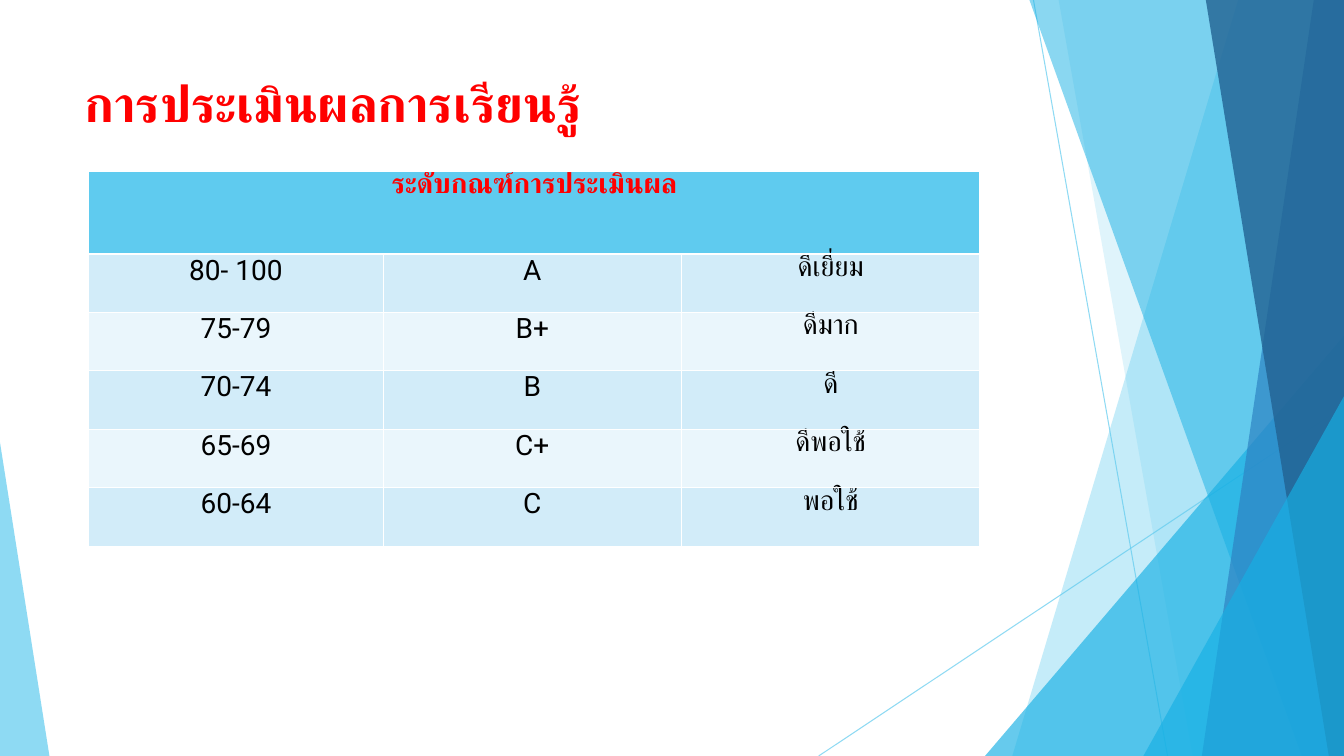
from lxml import etree
from pptx import Presentation
from pptx.dml.color import RGBColor
from pptx.enum.shapes import MSO_CONNECTOR, MSO_SHAPE
from pptx.enum.text import MSO_ANCHOR, PP_ALIGN
from pptx.oxml.ns import qn
from pptx.util import Inches, Pt

STRAIGHT = MSO_CONNECTOR.STRAIGHT
TRIANGLE = MSO_SHAPE.ISOSCELES_TRIANGLE
TOP = MSO_ANCHOR.TOP
LEFT, CENTER = PP_ALIGN.LEFT, PP_ALIGN.CENTER

WIDE, HIGH = 13.33, 7.5
FONT = "Roboto"
SKY, CYAN, BLUE, NAVY = "5FCBEF", "17B0E4", "2E83C3", "226292"
RED, BLACK = "FF0000", "000000"
STRIPES = ("D2ECF9", "EAF6FC")

HEAD = "ระดับกณฑ์การประเมินผล"
GRADES = [
    ("80- 100", "A", "ดีเยี่ยม"),
    ("75-79", "B+", "ดีมาก"),
    ("70-74", "B", "ดี"),
    ("65-69", "C+", "ดีพอใช้"),
    ("60-64", "C", "พอใช้"),
]


def paint(fill, color, alpha=100):
    """Solid fill from a hex string, with opacity in percent."""
    fill.solid()
    fill.fore_color.rgb = RGBColor.from_string(color)
    if alpha < 100:
        tint = fill._xPr.find(qn("a:solidFill"))[0]
        etree.SubElement(tint, qn("a:alpha"), val=str(alpha * 1000))


def style(para, size, color, bold, align):
    para.alignment = align
    font = para.font
    font.name, font.size, font.bold = FONT, Pt(size), bold
    font.color.rgb = RGBColor.from_string(color)


def finish(shape, color, alpha):
    shape.shadow.inherit = False
    shape.line.fill.background()
    paint(shape.fill, color, alpha)


def ray(shapes, *ends):
    line = shapes.add_connector(STRAIGHT, *map(Inches, ends))
    line.line.width = Pt(0.75)
    paint(line.line.fill, SKY, 70)
    etree.SubElement(line._element.spPr, qn("a:effectLst"))


def band(shapes, top, foot, color, alpha):
    """Full-height band from a slanted left side to the right edge."""
    pen = shapes.build_freeform(Inches(top), 0)
    points = [(WIDE, 0), (WIDE, HIGH), (foot, HIGH)]
    pen.add_line_segments([(Inches(x), Inches(y)) for x, y in points])
    finish(pen.convert_to_shape(), color, alpha)


def wedge(shapes, left, width, height, peak, color, alpha):
    """Triangle standing on the bottom edge; peak is 0 left to 1 right."""
    box = map(Inches, (left, HIGH - height, width, height))
    shape = shapes.add_shape(TRIANGLE, *box)
    shape.adjustments[0] = peak
    finish(shape, color, alpha)


def decor(shapes):
    ray(shapes, 10.25, 0, 11.58, HIGH)
    ray(shapes, WIDE, 4.03, 8.12, HIGH)
    band(shapes, 12.28, 10.04, SKY, 36)
    band(shapes, 10.5, 11.83, SKY, 20)
    wedge(shapes, 9.77, WIDE - 9.77, 4.17, 1, CYAN, 66)
    band(shapes, 10.21, 12.91, CYAN, 50)
    band(shapes, 13.03, 11.92, BLUE, 70)
    band(shapes, 11.96, 13.18, NAVY, 80)
    wedge(shapes, 11.34, WIDE - 11.34, 3.57, 1, CYAN, 66)
    wedge(shapes, 0, 0.49, 3.11, 0, SKY, 70)


def heading(title, box):
    title.left, title.top, title.width, title.height = map(Inches, box)
    frame = title.text_frame
    frame.text = "การประเมินผลการเรียนรู้"
    frame.vertical_anchor = TOP
    style(frame.paragraphs[0], 36, RED, True, LEFT)


def put(cell, text, fill, color, bold):
    cell.margin_top = cell.margin_bottom = 0
    cell.vertical_anchor = TOP
    cell.text = text
    style(cell.text_frame.paragraphs[0], 20, color, bold, CENTER)
    paint(cell.fill, fill)


def grades(shapes, box):
    count = len(GRADES)
    table = shapes.add_table(count + 1, 3, *map(Inches, box)).table
    # Column and row sizes
    for col, width in zip(table.columns, (2.92, 2.96, 2.96)):
        col.width = Inches(width)
    for row, height in zip(table.rows, [0.8] + [0.58] * count):
        row.height = Inches(height)
    table.rows[0].height = Inches(box[3] - 0.58 * count)
    # Header across all columns
    table.cell(0, 0).merge(table.cell(0, 2))
    put(table.cell(0, 0), HEAD, SKY, RED, True)
    # Striped grade rows
    for r, grade in enumerate(GRADES):
        for c, text in enumerate(grade):
            put(table.cell(r + 1, c), text, STRIPES[r % 2], BLACK, False)


def main():
    deck = Presentation()
    deck.slide_width, deck.slide_height = Inches(WIDE), Inches(HIGH)
    slide = deck.slides.add_slide(deck.slide_layouts[5])
    decor(slide.shapes)
    heading(slide.shapes.title, (0.74, 0.67, 9.4, 1.03))
    grades(slide.shapes, (0.88, 1.7, 8.84, 3.72))
    deck.save("out.pptx")


if __name__ == "__main__":
    main()
